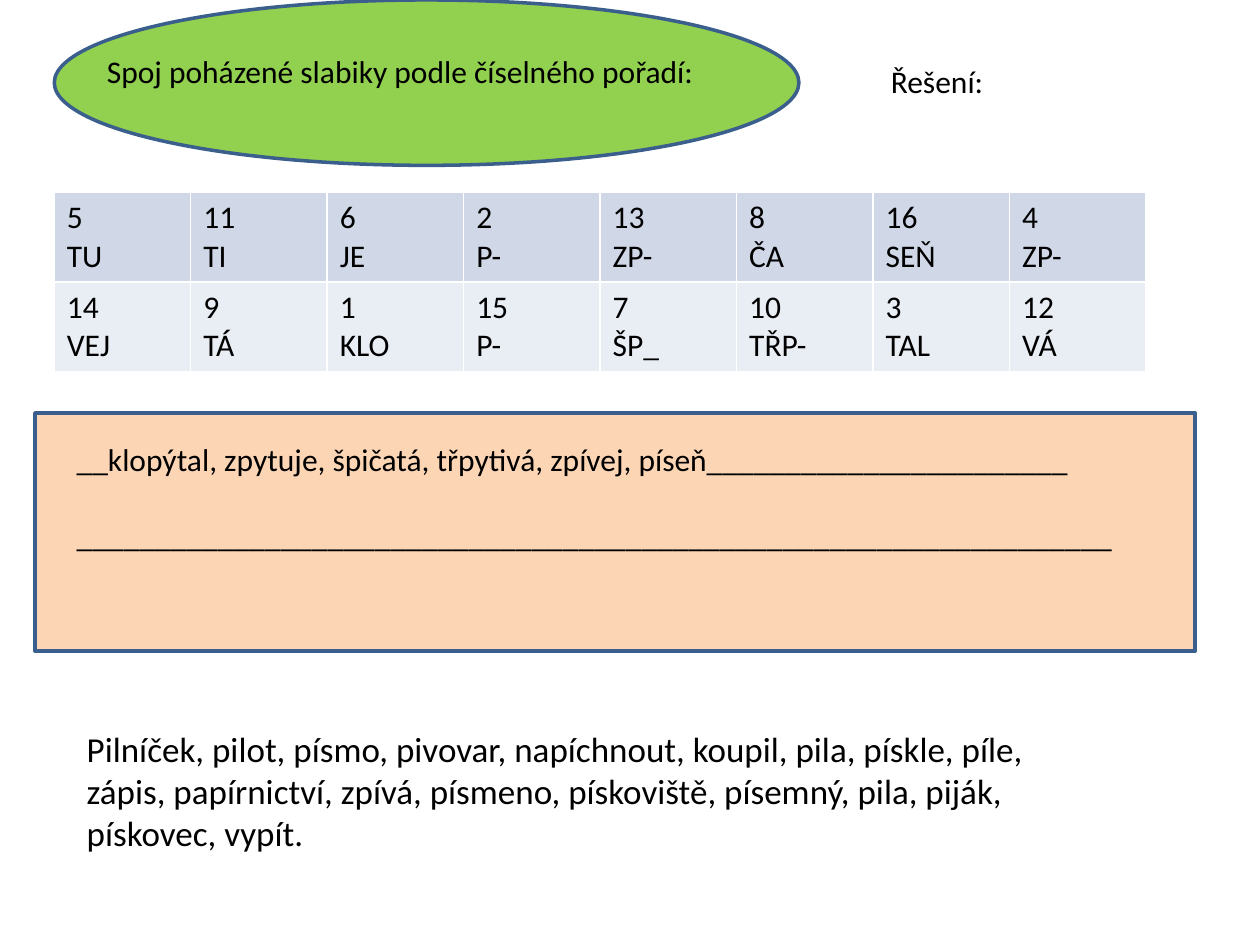
import pptx
import pptx.dml.color
import pptx.enum.shapes
import pptx.oxml
import pptx.oxml.ns
import pptx.util

Pt = pptx.util.Pt
SHAPES = pptx.enum.shapes.MSO_SHAPE
FONT = "Calibri"
COLORS = {
    "text": "000000",
    "outline": "3A5F8C",
    "title": "92D050",
    "answer": "FCD5B5",
    "first row": "D0D8E8",
    "second row": "E9EDF4",
    "grid": "FFFFFF",
}
SYLLABLES = [
    [("5", "TU"), ("11", "TI"), ("6", "JE"), ("2", "P-"),
     ("13", "ZP-"), ("8", "ČA"), ("16", "SEŇ"), ("4", "ZP-")],
    [("14", "VEJ"), ("9", "TÁ"), ("1", "KLO"), ("15", "P-"),
     ("7", "ŠP_"), ("10", "TŘP-"), ("3", "TAL"), ("12", "VÁ")],
]
ANSWER_LINES = [
    "__klopýtal, zpytuje, špičatá, třpytivá, zpívej, píseň" + "_" * 23,
    "_" * 66,
]
WORDS = [
    "Pilníček, pilot, písmo, pivovar, napíchnout, koupil, pila, pískle, píle, "
    "zápis, papírnictví, zpívá, písmeno, pískoviště, písemný, pila, piják,",
    "pískovec, vypít.",
]


def rgb(name):
    return pptx.dml.color.RGBColor.from_string(COLORS[name])


def write_lines(frame, lines, size=18, gap=0):
    """Write one paragraph per line, with a gap in points between them."""
    frame.text = "\n".join(lines)
    for index, para in enumerate(frame.paragraphs):
        para.font.name = FONT
        para.font.size = Pt(size)
        para.font.color.rgb = rgb("text")
        if index:
            para.space_before = Pt(gap)


def add_panel(page, kind, left, top, width, height, color):
    panel = page.shapes.add_shape(kind, Pt(left), Pt(top), Pt(width), Pt(height))
    panel.shadow.inherit = False
    panel.fill.solid()
    panel.fill.fore_color.rgb = rgb(color)
    panel.line.color.rgb = rgb("outline")
    panel.line.width = Pt(2)


def add_text(page, left, top, width, height, lines, size=18, gap=0):
    box = page.shapes.add_textbox(Pt(left), Pt(top), Pt(width), Pt(height))
    box.text_frame.word_wrap = True
    write_lines(box.text_frame, lines, size, gap)


def set_borders(cell):
    """Draw thin lines on all four sides, placed before the cell's fill."""
    properties = cell._tc.get_or_add_tcPr()
    for index, side in enumerate(("lnL", "lnR", "lnT", "lnB")):
        border = pptx.oxml.parse_xml(
            f'<a:{side} {pptx.oxml.ns.nsdecls("a")} w="{Pt(1)}"><a:solidFill>'
            f'<a:srgbClr val="{COLORS["grid"]}"/></a:solidFill></a:{side}>'
        )
        properties.insert(index, border)


def add_syllable_table(page, left, top, column_width, row_height):
    row_count, column_count = len(SYLLABLES), len(SYLLABLES[0])
    table = page.shapes.add_table(
        row_count, column_count, Pt(left), Pt(top),
        Pt(column_width * column_count), Pt(row_height * row_count),
    ).table
    table.first_row = False
    table.horz_banding = False
    for column in table.columns:
        column.width = Pt(column_width)
    for row, syllables, color in zip(
        table.rows, SYLLABLES, ("first row", "second row")
    ):
        row.height = Pt(row_height)
        for cell, lines in zip(row.cells, syllables):
            write_lines(cell.text_frame, lines)
            cell.fill.solid()
            cell.fill.fore_color.rgb = rgb(color)
            set_borders(cell)


def main():
    deck = pptx.Presentation()
    deck.slide_width, deck.slide_height = Pt(720), Pt(540)
    page = deck.slides.add_slide(deck.slide_layouts[6])

    add_panel(page, SHAPES.RECTANGLE, 20, 236, 663, 136, "answer")
    add_panel(page, SHAPES.OVAL, 31, 0, 425.5, 94.5, "title")
    add_syllable_table(page, 31, 110, 78, 50.4)
    add_text(page, 54, 26, 374, 29,
             ["Spoj poházené slabiky podle číselného pořadí:"])
    add_text(page, 36.7, 247.7, 612, 73, ANSWER_LINES, gap=22)
    add_text(page, 42.5, 412, 562, 80, WORDS, size=20)
    add_text(page, 502, 32, 119, 51, ["Řešení:"])

    deck.save("out.pptx")


if __name__ == "__main__":
    main()
